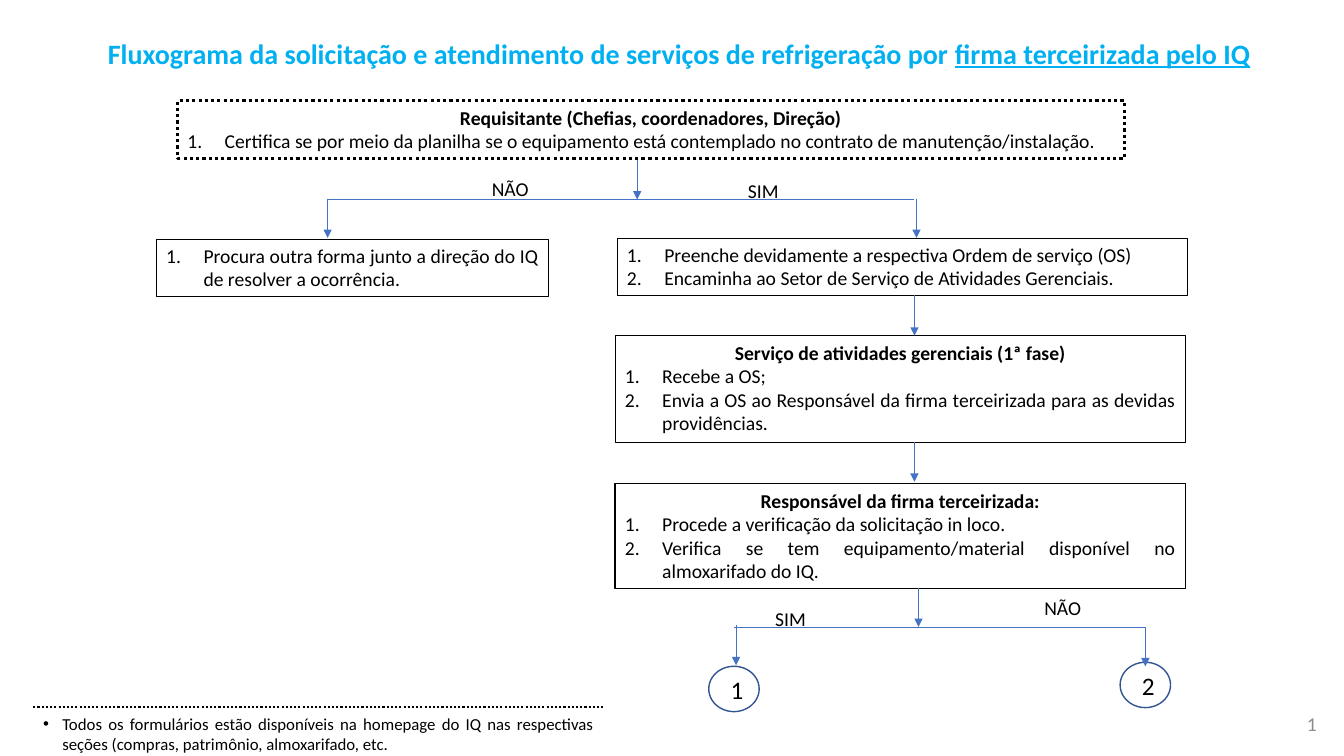
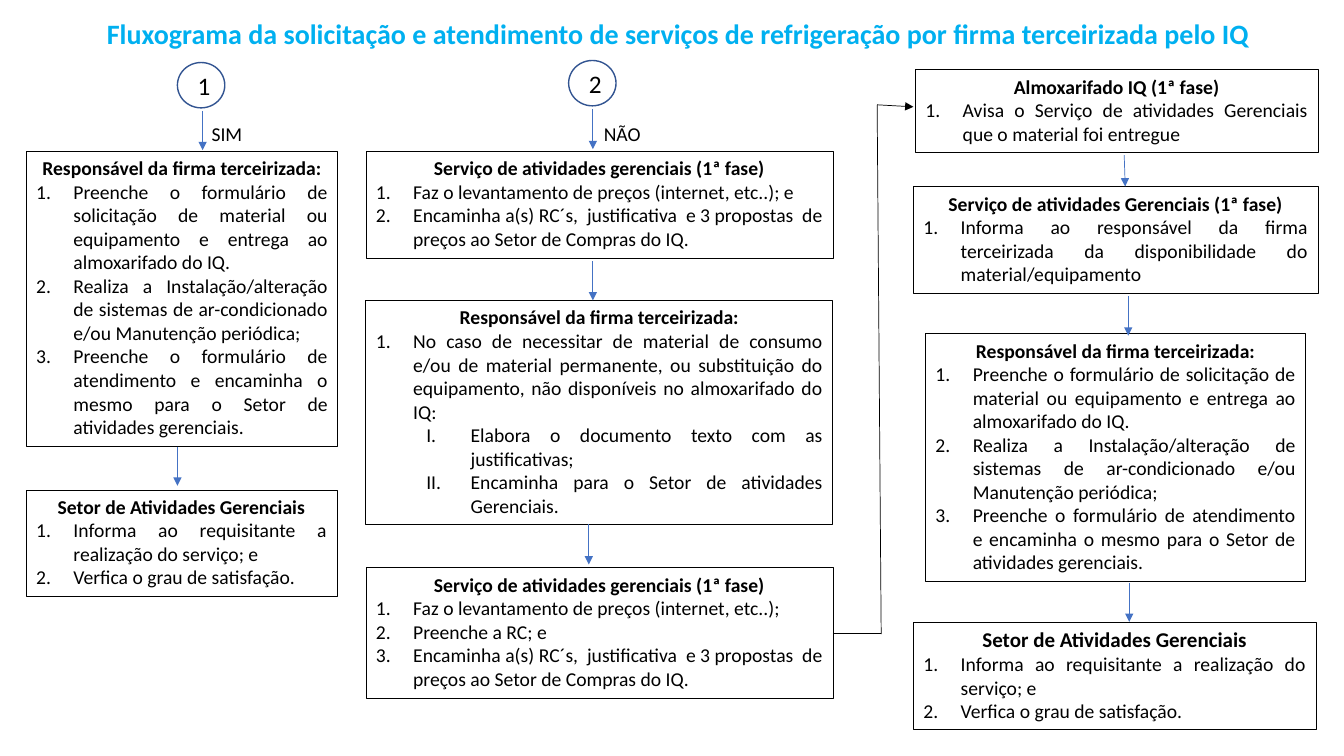
from lxml.etree import SubElement
from pptx import Presentation
from pptx.dml.color import RGBColor
from pptx.enum.dml import MSO_LINE
from pptx.enum.shapes import MSO_CONNECTOR, MSO_SHAPE
from pptx.enum.text import MSO_ANCHOR, MSO_AUTO_SIZE, PP_ALIGN
from pptx.oxml.ns import qn
from pptx.util import Inches, Pt

FONT = "Calibri"
COLORS = {"title": "00B0F0", "ink": "000000", "arrow": "4472C4",
          "ring": "325491", "paper": "FFFFFF", "number": "8C8C8C"}
BULLETS = {
    "step": (0.37, 0.37, 0, "buAutoNum", {"type": "arabicPeriod"}),
    "roman": (0.94, 0.44, 1, "buAutoNum", {"type": "romanUcPeriod"}),
    "dot": (0.19, 0.19, 0, "buChar", {"char": "•"}),
}

TITLE = "Fluxograma da solicitação e atendimento de serviços de refrigeração por "
TITLE_END = "firma terceirizada pelo IQ"
CONTRACTOR = "Responsável da firma terceirizada:"
MANAGEMENT = "Serviço de atividades gerenciais (1ª fase)"
SECTOR = "Setor de Atividades Gerenciais"
QUOTES = "Encaminha a(s) RC´s,  justificativa  e 3 propostas  de preços ao Setor de Compras do IQ."
SERVICE_STEPS = [
    "Preenche o formulário de solicitação de material ou equipamento e entrega ao almoxarifado do IQ.",
    "Realiza a Instalação/alteração de sistemas de ar-condicionado e/ou Manutenção periódica;",
    "Preenche o formulário de atendimento e encaminha o mesmo para o Setor de atividades gerenciais.",
]
CLOSING_STEPS = ["Informa ao requisitante a realização do serviço; e",
                 "Verfica o grau de satisfação."]
FOOTNOTE = ("Todos os formulários estão disponíveis na homepage do IQ nas respectivas "
            "seções (compras, patrimônio, almoxarifado, etc.")

REQUEST_PAGE = {
    "title": (0.31, 0.31, True),
    "boxes": {
        "requester": {
            "at": (1.76, 1, 9.39, 0.57), "weight": 2.25, "dash": MSO_LINE.ROUND_DOT,
            "heading": "Requisitante (Chefias, coordenadores, Direção)",
            "steps": ["Certifica se por meio da planilha se o equipamento está contemplado "
                      "no contrato de manutenção/instalação."]},
        "order": {
            "at": (6.12, 2.36, 5.66, 0.57),
            "steps": ["Preenche devidamente a respectiva Ordem de serviço (OS)",
                      "Encaminha ao Setor de Serviço de Atividades Gerenciais."]},
        "alternative": {
            "at": (1.55, 2.37, 3.89, 0.57),
            "steps": ["Procura outra forma junto a direção do IQ de resolver a ocorrência."]},
        "management": {
            "at": (6.1, 3.33, 5.66, 1.06), "heading": MANAGEMENT,
            "steps": ["Recebe a OS;",
                      "Envia a OS ao Responsável da firma terceirizada para as devidas providências."]},
        "contractor": {
            "at": (6.1, 4.8, 5.66, 1.04), "weight": 0.75, "heading": CONTRACTOR,
            "steps": ["Procede a verificação da solicitação in loco.",
                      "Verifica se tem equipamento/material disponível no almoxarifado do IQ."]},
    },
    "circles": [("1", 7.03, 6.61, 0.5), ("2", 11.11, 6.57, 0.5)],
    "arrows": [(6.32, 1.59, 6.32, 1.98), (3.25, 1.97, 3.25, 2.36),
               (9.09, 1.97, 9.09, 2.36), (9.07, 2.93, 9.07, 3.33),
               (9.07, 4.39, 9.07, 4.78), (9.11, 5.83, 9.11, 6.22),
               (7.3, 6.2, 7.3, 6.6), (11.36, 6.22, 11.36, 6.61)],
    "branches": [(3.25, 1.98, 9.07, 1.98), (7.28, 6.22, 11.36, 6.22)],
    "labels": [("NÃO", 4.78, 1.71), ("SIM", 7.32, 1.73),
               ("SIM", 7.59, 5.97), ("NÃO", 10.26, 5.86)],
}

SERVICE_PAGE = {
    "title": (0.3, 0.11, False),
    "boxes": {
        "service": {
            "at": (0.26, 1.5, 3.09, 2.93), "weight": 0.75,
            "heading": CONTRACTOR, "steps": SERVICE_STEPS},
        "closing": {
            "at": (0.26, 4.86, 3.08, 1.06), "heading": SECTOR, "steps": CLOSING_STEPS},
        "prices": {
            "at": (3.63, 1.5, 4.63, 1.06), "heading": MANAGEMENT,
            "steps": ["Faz o levantamento de preços (internet, etc..); e", QUOTES]},
        "materials": {
            "at": (3.63, 2.98, 4.63, 2.22), "weight": 0.75, "heading": CONTRACTOR,
            "steps": ["No caso de necessitar de material de consumo e/ou de material permanente, "
                      "ou substituição do equipamento, não disponíveis no almoxarifado do IQ:"],
            "substeps": ["Elabora o documento texto com as justificativas;",
                         "Encaminha para o Setor de atividades Gerenciais."]},
        "purchase": {
            "at": (3.63, 5.63, 4.63, 1.3), "heading": MANAGEMENT,
            "steps": ["Faz o levantamento de preços (internet, etc..);", "Preenche a RC; e", QUOTES]},
        "stockroom": {
            "at": (9.08, 0.69, 3.99, 0.82), "heading": "Almoxarifado IQ (1ª fase)",
            "steps": ["Avisa o Serviço de atividades Gerenciais que o material foi entregue"]},
        "notice": {
            "at": (9.06, 1.85, 4.01, 1.06),
            "heading": "Serviço de atividades Gerenciais (1ª fase)",
            "steps": ["Informa ao responsável da firma terceirizada da disponibilidade "
                      "do material/equipamento"]},
        "delivery": {
            "at": (9.18, 3.31, 3.77, 2.46), "weight": 0.75,
            "heading": CONTRACTOR, "steps": SERVICE_STEPS},
        "delivery closing": {
            "at": (9.06, 6.17, 3.99, 1.06), "heading": SECTOR, "heading_size": 15,
            "steps": CLOSING_STEPS},
    },
    "circles": [("1", 1.76, 0.62, 0.47), ("2", 5.64, 0.6, 0.47)],
    "arrows": [(2.01, 1.1, 2.01, 1.49), (1.76, 4.43, 1.76, 4.82),
               (5.88, 1.08, 5.88, 1.48), (5.88, 2.59, 5.88, 2.98),
               (5.84, 5.2, 5.84, 5.6), (11.15, 1.54, 11.16, 1.85),
               (11.19, 2.94, 11.19, 3.33), (11.2, 5.78, 11.2, 6.17)],
    "branches": [],
    "labels": [("SIM", 2, 1.16), ("NÃO", 5.89, 1.16)],
}


def rgb(name):
    return RGBColor.from_string(COLORS[name])


def format_span(span, size, color="ink", bold=False, underline=None):
    font = span.font
    font.name, font.size, font.bold, font.underline = FONT, Pt(size), bold, underline
    font.color.rgb = rgb(color)


def write(para, text, size, align=PP_ALIGN.LEFT, **style):
    para.text = text
    para.alignment = align
    for span in para.runs:
        format_span(span, size, **style)


def add_bullet(para, kind):
    margin, hanging, level, tag, attributes = BULLETS[kind]
    para.level = level
    properties = para._p.get_or_add_pPr()
    properties.set("marL", str(Inches(margin)))
    properties.set("indent", str(-Inches(hanging)))
    if kind == "dot":
        SubElement(properties, qn("a:buFont")).set("typeface", "Arial")
    SubElement(properties, qn("a:" + tag), attributes)


def add_text(page, left, top, width, height):
    frame = page.shapes.add_textbox(*map(Inches, (left, top, width, height))).text_frame
    frame.word_wrap = True
    return frame


def add_shape(page, kind, at, color, weight):
    shape = page.shapes.add_shape(kind, *map(Inches, at))
    shape.shadow.inherit = False
    shape.line.color.rgb = rgb(color)
    shape.line.width = Pt(weight)
    return shape


def add_box(page, at, steps, heading=None, heading_size=14, substeps=(), weight=0.25, dash=None):
    box = add_shape(page, MSO_SHAPE.RECTANGLE, at, "ink", weight)
    box.fill.background()
    if dash:
        box.line.dash_style = dash
    frame = box.text_frame
    frame.word_wrap = True
    frame.vertical_anchor = MSO_ANCHOR.TOP
    frame.auto_size = MSO_AUTO_SIZE.SHAPE_TO_FIT_TEXT
    items = [(heading, None)] if heading else []
    items += [(step, "step") for step in steps] + [(step, "roman") for step in substeps]
    for index, (text, bullet) in enumerate(items):
        para = frame.add_paragraph() if index else frame.paragraphs[0]
        if bullet:
            add_bullet(para, bullet)
            write(para, text, 14, PP_ALIGN.JUSTIFY)
        else:
            write(para, text, heading_size, PP_ALIGN.CENTER, bold=True)
    return box


def add_circle(page, number, left, top, width):
    circle = add_shape(page, MSO_SHAPE.OVAL, (left, top, width, 0.45), "ring", 1)
    circle.fill.solid()
    circle.fill.fore_color.rgb = rgb("paper")
    frame = circle.text_frame
    frame.margin_left = Inches(0.06)
    frame.margin_right = frame.margin_top = frame.margin_bottom = 0
    frame.vertical_anchor = MSO_ANCHOR.MIDDLE
    write(frame.paragraphs[0], number, 18, PP_ALIGN.CENTER)


def add_line(page, ends, color="arrow", weight=0.5, arrow=False):
    line = page.shapes.add_connector(MSO_CONNECTOR.STRAIGHT, *map(Inches, ends))
    line.line.color.rgb = rgb(color)
    line.line.width = Pt(weight)
    if arrow:
        SubElement(line.line._get_or_add_ln(), qn("a:tailEnd")).set("type", "triangle")
    SubElement(line._element.spPr, qn("a:effectLst"))
    return line


def add_title(page, left, top, underlined):
    para = add_text(page, left, top, 12.85, 0.44).paragraphs[0]
    para.alignment = PP_ALIGN.CENTER
    for text, underline in ((TITLE, None), (TITLE_END, underlined or None)):
        span = para.add_run()
        span.text = text
        format_span(span, 20, "title", True, underline)


def add_page_number(page, number):
    frame = add_text(page, 10.16, 6.98, 3, 0.4)
    frame.vertical_anchor = MSO_ANCHOR.MIDDLE
    para = frame.paragraphs[0]
    para.alignment = PP_ALIGN.RIGHT
    field = SubElement(para._p, qn("a:fld"), {
        "id": "{B6F15528-21DE-4FAA-801E-634DDDAF4B2B}", "type": "slidenum"})
    style = SubElement(field, qn("a:rPr"), {"lang": "pt-BR", "sz": "1400"})
    fill = SubElement(style, qn("a:solidFill"))
    SubElement(fill, qn("a:srgbClr")).set("val", COLORS["number"])
    SubElement(style, qn("a:latin")).set("typeface", FONT)
    SubElement(field, qn("a:t")).text = str(number)


def add_flow_page(deck, flow):
    page = deck.slides.add_slide(deck.slide_layouts[6])
    add_title(page, *flow["title"])
    boxes = {name: add_box(page, **box) for name, box in flow["boxes"].items()}
    for circle in flow["circles"]:
        add_circle(page, *circle)
    for ends in flow["branches"]:
        add_line(page, ends)
    for ends in flow["arrows"]:
        add_line(page, ends, arrow=True)
    for text, left, top in flow["labels"]:
        write(add_text(page, left, top, 0.93, 0.34).paragraphs[0], text, 14)
    return page, boxes


def main():
    deck = Presentation()
    deck.slide_width, deck.slide_height = Inches(13.33), Inches(7.5)

    page, boxes = add_flow_page(deck, REQUEST_PAGE)
    footnote_rule = add_line(page, (0.33, 7.01, 5.99, 7.01), "ink", 1.5)
    footnote_rule.line.dash_style = MSO_LINE.ROUND_DOT
    para = add_text(page, 0.33, 7.03, 5.66, 0.5).paragraphs[0]
    add_bullet(para, "dot")
    write(para, FOOTNOTE, 12, PP_ALIGN.JUSTIFY)
    add_page_number(page, 1)

    page, boxes = add_flow_page(deck, SERVICE_PAGE)
    purchase_exit = add_line(page, (8.26, 6.28, 8.74, 6.28), "ink")
    purchase_exit.begin_connect(boxes["purchase"], 3)
    add_line(page, (8.7, 1.04, 8.74, 6.29), "ink")
    add_line(page, (8.7, 1.04, 9.06, 1.06), "ink", arrow=True)

    deck.save("out.pptx")


if __name__ == "__main__":
    main()
